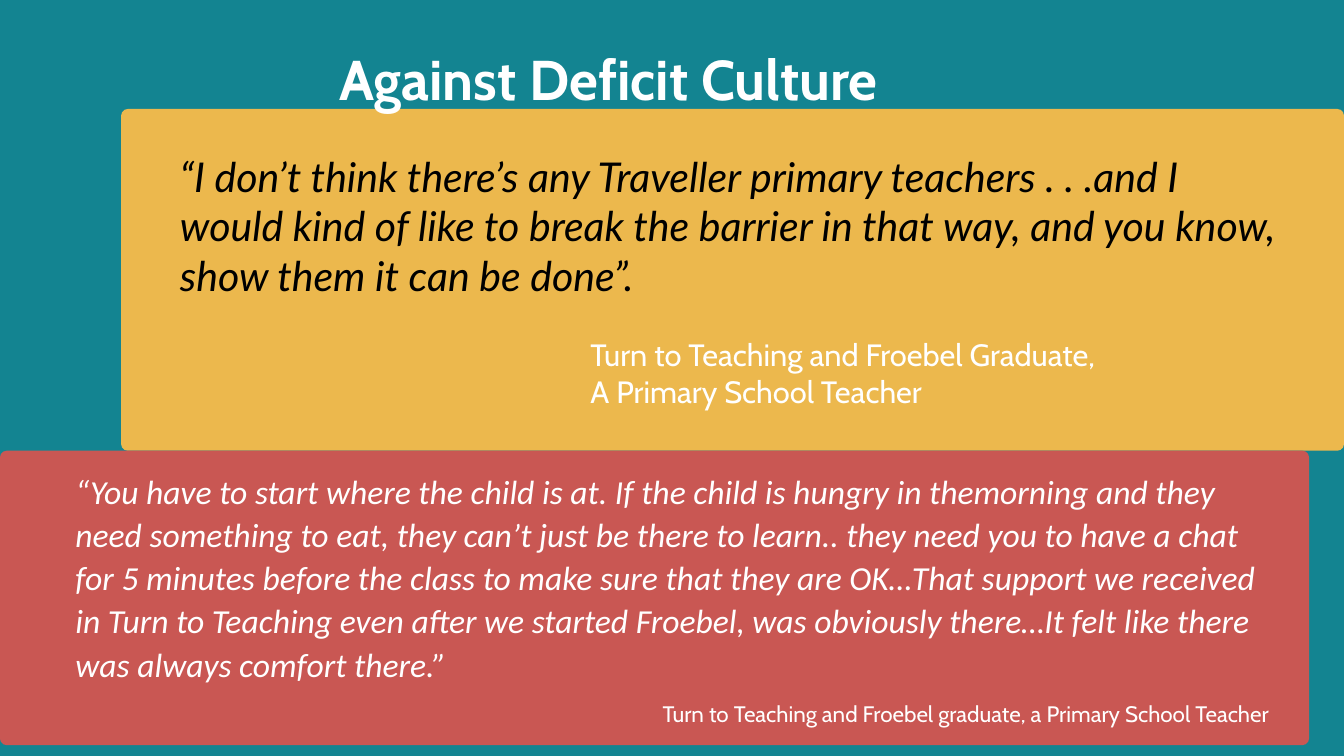
import pptx
import pptx.dml.color
import pptx.enum.shapes
import pptx.enum.text
import pptx.util

Cm = pptx.util.Cm
Pt = pptx.util.Pt
RGBColor = pptx.dml.color.RGBColor
PP_ALIGN = pptx.enum.text.PP_ALIGN

TEAL = RGBColor(0x13, 0x84, 0x91)
YELLOW = RGBColor(0xEC, 0xB8, 0x4D)
RED = RGBColor(0xC9, 0x57, 0x53)
WHITE = RGBColor(0xFF, 0xFF, 0xFF)
BLACK = RGBColor(0x00, 0x00, 0x00)

CORNER = 0.25  # corner radius of the bands, in cm
INSET = 0.25
CREDIT_INSET = 0.53

TITLE_FONT = {"name": "Cabin", "size": Pt(60), "bold": True}
QUOTE_FONT = {"name": "Lato", "size": Pt(44), "italic": True}
CREDIT_FONT = {"name": "Cabin", "size": Pt(33)}
LONG_QUOTE_FONT = {"name": "Calibri", "size": Pt(36), "italic": True}
SMALL_CREDIT_FONT = {"name": "Cabin", "size": Pt(24)}

TEACHER_QUOTE = (
    "“I don’t think there’s any Traveller primary teachers . . .and I would "
    "kind of like to break the barrier in that way, and you know, show them "
    "it can be done”."
)
SUPPORT_QUOTE = (
    "“You have to start where the child is at. If the child is hungry in "
    "themorning and they need something to eat, they can’t just be there to "
    "learn.. they need you to have a chat for 5 minutes before the class to "
    "make sure that they are OK…That support we received in Turn to Teaching "
    "even after we started Froebel, was obviously there…It felt like there "
    "was always comfort there.”"
)


def set_attributes(obj, values):
    for name, value in values.items():
        setattr(obj, name, value)


def place(sp, left, top, width, height):
    set_attributes(sp, {"left": Cm(left), "top": Cm(top),
                        "width": Cm(width), "height": Cm(height)})


def add_band(slide, left, top, width, height, color):
    sp = slide.shapes.add_shape(
        pptx.enum.shapes.MSO_SHAPE.ROUNDED_RECTANGLE,
        Cm(left), Cm(top), Cm(width), Cm(height))
    sp.adjustments[0] = CORNER / min(width, height)
    sp.fill.solid()
    sp.fill.fore_color.rgb = color
    sp.line.fill.background()
    sp.shadow.inherit = False


def format_frame(tf, left_inset=0, inset=0):
    set_attributes(tf, {
        "word_wrap": True,
        "auto_size": pptx.enum.text.MSO_AUTO_SIZE.NONE,
        "vertical_anchor": pptx.enum.text.MSO_ANCHOR.TOP,
        "margin_left": Cm(left_inset), "margin_right": Cm(inset),
        "margin_top": Cm(inset / 2), "margin_bottom": Cm(inset / 2),
    })


def write(p, text, font, color, **paragraph_format):
    set_attributes(p, paragraph_format)
    r = p.add_run()
    r.text = text
    set_attributes(r.font, font)
    r.font.color.rgb = color


def add_text(slide, box, paragraphs, color, left_inset=0, inset=0):
    """Add a text box; paragraphs holds (text, font, paragraph format)."""
    tf = slide.shapes.add_textbox(*map(Cm, box)).text_frame
    format_frame(tf, left_inset, inset)
    for i, (text, font, paragraph_format) in enumerate(paragraphs):
        p = tf.add_paragraph() if i else tf.paragraphs[0]
        write(p, text, font, color, **paragraph_format)


def add_title(slide, text):
    """Fill the title placeholder and bring it in front of the band."""
    title = slide.shapes.title
    place(title, 0.45, 1.27, 45.09, 2.84)
    format_frame(title.text_frame)
    write(title.text_frame.paragraphs[0], text, TITLE_FONT, WHITE,
          alignment=PP_ALIGN.CENTER, line_spacing=Pt(84))
    title.element.getparent().append(title.element)


def main():
    prs = pptx.Presentation()
    prs.slide_width, prs.slide_height = Cm(50.8), Cm(28.58)
    slide = prs.slides.add_slide(prs.slide_layouts[5])
    slide.background.fill.solid()
    slide.background.fill.fore_color.rgb = TEAL

    add_band(slide, 4.58, 4.12, 46.22, 12.92, YELLOW)
    add_title(slide, "Against Deficit Culture")
    add_band(slide, 0, 17.04, 49.48, 11.13, RED)

    spacing = {"line_spacing": Pt(46.2)}
    add_text(slide, (2.85, 17.7, 45.11, 9.65), [
        (SUPPORT_QUOTE, LONG_QUOTE_FONT, spacing),
        ("Turn to Teaching and Froebel graduate, a Primary School Teacher",
         SMALL_CREDIT_FONT, {"alignment": PP_ALIGN.RIGHT, **spacing}),
    ], WHITE)
    add_text(slide, (6.55, 5.61, 42.34, 5.89),
             [(TEACHER_QUOTE, QUOTE_FONT, {})], BLACK, INSET, INSET)
    add_text(slide, (21.79, 12.57, 25.2, 3.07), [
        ("Turn to Teaching and Froebel Graduate,", CREDIT_FONT, {}),
        ("A Primary School Teacher", CREDIT_FONT, {}),
    ], WHITE, CREDIT_INSET, INSET)

    prs.save("out.pptx")


if __name__ == "__main__":
    main()
